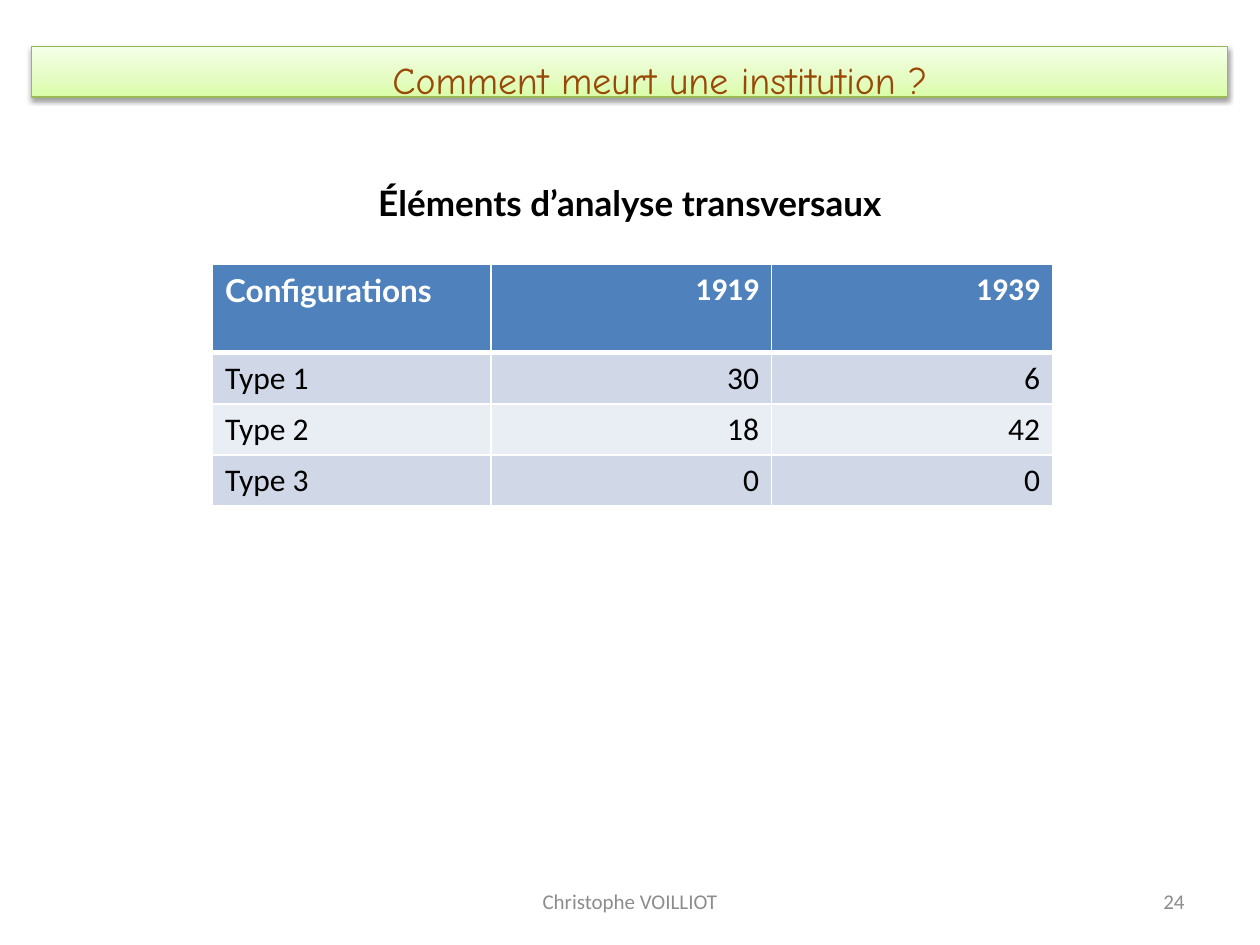
from copy import deepcopy

from lxml import etree
from pptx import Presentation
from pptx import util as u
from pptx.dml.color import RGBColor
from pptx.enum import text
from pptx.oxml import parse_xml
from pptx.oxml.ns import nsdecls, qn

COLORS = {
    "lime": "DAFDA7", "pale_lime": "E4FCC2", "mist": "F5FFE7", "green": "98B955",
    "brown": "984807", "black": "000000", "white": "FFFFFF", "gray": "8C8C8C",
    "blue": "4F81BD", "band": "D0D8E8", "light_band": "E9EDF4",
}
LEFT, CENTER, RIGHT = text.PP_ALIGN.LEFT, text.PP_ALIGN.CENTER, text.PP_ALIGN.RIGHT
ROWS = [("Configurations", "1919", "1939"), ("Type 1", "30", "6"),
        ("Type 2", "18", "42"), ("Type 3", "0", "0")]


def rgb(name):
    """Return the named colour."""
    return RGBColor.from_string(COLORS[name])


def write(frame, words, color, align=LEFT, **font):
    """Write one formatted paragraph into a text frame."""
    para = frame.paragraphs[0]
    para.alignment = align
    span = para.add_run()
    span.text = words
    span.font.color.rgb = rgb(color)
    for key, value in font.items():
        setattr(span.font, key, value)


def place(shape, box):
    """Move a shape to a box given in points."""
    for key, value in zip(("left", "top", "width", "height"), box):
        setattr(shape, key, u.Pt(value))


def add_banner(page, box):
    """Format the title as a green gradient banner with a shadow."""
    banner = page.shapes.title
    place(banner, box)
    banner.fill.gradient()
    banner.fill.gradient_angle = 90
    stops = banner.fill._fill._gradFill.find(qn("a:gsLst"))
    stops.insert(1, deepcopy(stops[0]))
    for stop, place_at, name in zip(banner.fill.gradient_stops, (0, 0.35, 1),
                                    ("lime", "pale_lime", "mist")):
        stop.position = place_at
        stop.color.rgb = rgb(name)
    banner.line.color.rgb = rgb("green")
    banner.line.width = u.Pt(0.75)
    banner.shadow.inherit = False
    effects = banner._element.spPr.find(qn("a:effectLst"))
    effects.append(parse_xml(
        f'<a:outerShdw {nsdecls("a")} blurRad="{u.Pt(3.1)}" dist="{u.Pt(1.6)}" '
        f'dir="5400000" rotWithShape="0"><a:srgbClr val="{COLORS["black"]}">'
        '<a:alpha val="38000"/></a:srgbClr></a:outerShdw>'))
    frame = banner.text_frame
    layout = {"margin_left": u.Pt(42), "margin_top": u.Pt(6), "margin_bottom": 0,
              "vertical_anchor": text.MSO_ANCHOR.TOP, "auto_size": text.MSO_AUTO_SIZE.NONE}
    for key, value in layout.items():
        setattr(frame, key, value)
    write(frame, "Comment meurt une institution ?", "brown", CENTER,
          size=u.Pt(21.6), name="Comic Neue")


def add_text(page, box, words, color, align, anchor, **font):
    """Add a wrapped text box."""
    frame = page.shapes.add_textbox(*map(u.Pt, box)).text_frame
    frame.word_wrap = True
    frame.vertical_anchor = anchor
    write(frame, words, color, align, **font)


def add_border(cell, side, width):
    """Draw one white border of a cell."""
    line = etree.SubElement(cell._tc.get_or_add_tcPr(), qn(f"a:ln{side}"), w=str(u.Pt(width)))
    fill = etree.SubElement(line, qn("a:solidFill"))
    etree.SubElement(fill, qn("a:srgbClr"), val=COLORS["white"])


def add_counts(page, box):
    """Add the table of configurations by year."""
    table = page.shapes.add_table(len(ROWS), 3, *map(u.Pt, box)).table
    for column, width in zip(table.columns, (159, 160.5, 160.5)):
        column.width = u.Pt(width)
    for r, values in enumerate(ROWS):
        header = r == 0
        table.rows[r].height = u.Pt(50.4 if header else 29.2)
        fill = "blue" if header else ("light_band", "band")[r % 2]
        for c, value in enumerate(values):
            cell = table.cell(r, c)
            for side in "LRTB":
                thick = (header and side == "B") or (r == 1 and side == "T")
                add_border(cell, side, 3 if thick else 1)
            cell.fill.solid()
            cell.fill.fore_color.rgb = rgb(fill)
            write(cell.text_frame, value, "white" if header else "black",
                  RIGHT if c else LEFT, size=u.Pt(18), bold=header,
                  name="Lato" if header and c == 0 else "Calibri")


def add_footer(page, box):
    """Add the author in the middle and the page number on the right."""
    left, top, width, height = box
    style = {"anchor": text.MSO_ANCHOR.MIDDLE, "size": u.Pt(12), "name": "Calibri"}
    add_text(page, (left + 210, top, 228, height), "Christophe VOILLIOT", "gray", CENTER, **style)
    add_text(page, (left + width - 168, top, 168, height), "24", "gray", RIGHT, **style)


def main():
    """Build the deck."""
    deck = Presentation()
    deck.slide_width, deck.slide_height = u.Pt(720), u.Pt(540)
    page = deck.slides.add_slide(deck.slide_layouts[5])
    add_banner(page, (18, 26.6, 683.5, 28.8))
    add_text(page, (36, 100, 648, 32), "Éléments d’analyse transversaux", "black", CENTER,
             text.MSO_ANCHOR.TOP, size=u.Pt(20), name="Lato", bold=True)
    add_counts(page, (121.5, 151.2, 480, 138))
    add_footer(page, (36, 500.5, 648, 28.8))
    deck.save("out.pptx")


if __name__ == "__main__":
    main()
